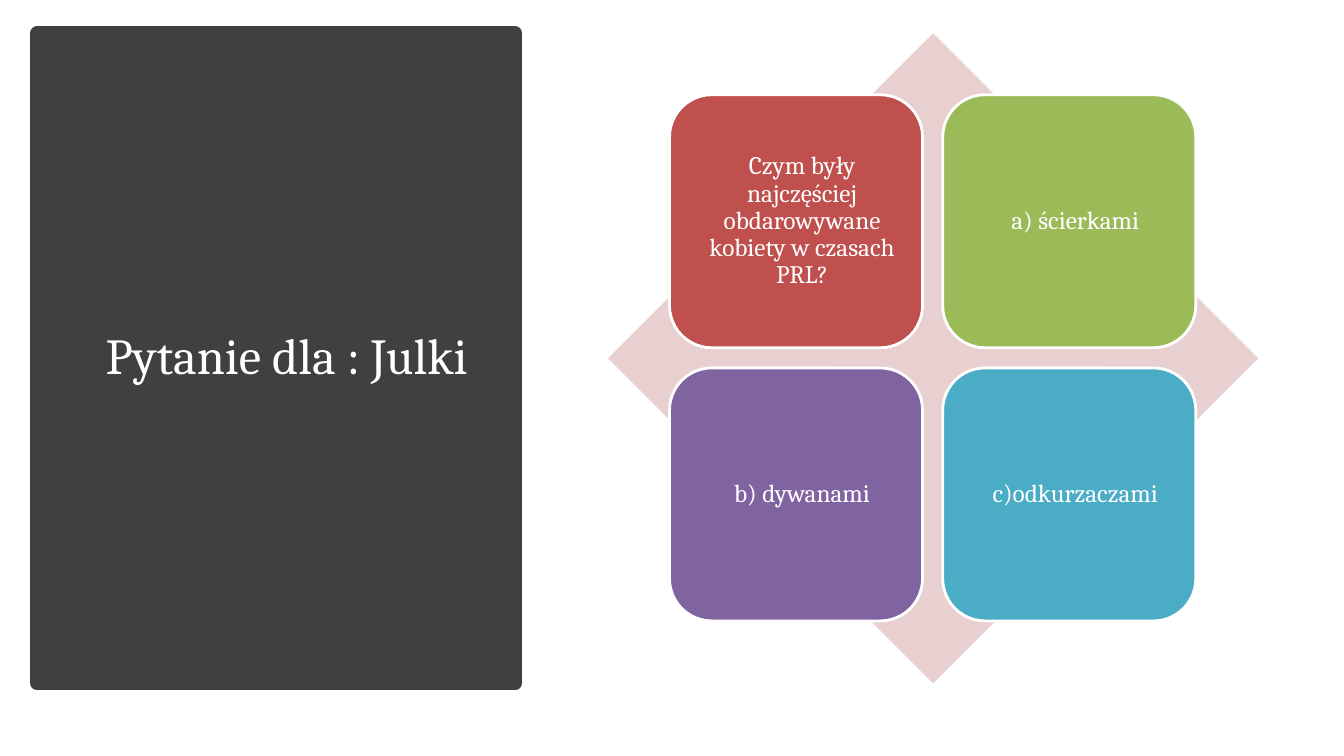
from dataclasses import dataclass

from pptx import Presentation
from pptx.dml.color import RGBColor
from pptx.enum.shapes import MSO_SHAPE as Shape
from pptx.enum.text import MSO_ANCHOR as Anchor, PP_ALIGN as Align
from pptx.slide import Slide
from pptx.util import Inches, Pt


def color(hex_code):
    return RGBColor.from_string(hex_code)


@dataclass
class QuizPage:
    page: Slide
    font: str = "Cambria"
    ink: str = "FFFFFF"

    def shape(self, kind, left, top, width, height, fill, line=None, weight=0):
        box = self.page.shapes.add_shape(
            kind, Inches(left), Inches(top), Inches(width), Inches(height))
        box.shadow.inherit = False
        box.fill.solid()
        box.fill.fore_color.rgb = color(fill)
        if line:
            box.line.color.rgb = color(line)
            box.line.width = Pt(weight)
        else:
            box.line.fill.background()
        return box

    def label(self, box, text, size, align):
        frame = box.text_frame
        frame.word_wrap = True
        frame.vertical_anchor = Anchor.MIDDLE
        frame.text = text
        para = frame.paragraphs[0]
        para.alignment = align
        para.line_spacing = 0.9
        span = para.runs[0]
        span.font.name = self.font
        span.font.size = Pt(size)
        span.font.color.rgb = color(self.ink)

    def title(self, text, left, top, width, height):
        box = self.page.shapes.add_textbox(
            Inches(left), Inches(top), Inches(width), Inches(height))
        self.label(box, text, 36, Align.LEFT)

    def tile(self, text, left, top, side, fill):
        box = self.shape(Shape.ROUNDED_RECTANGLE, left, top, side, side,
                         fill, self.ink, 2)
        box.adjustments[0] = 0.167
        frame = box.text_frame
        frame.margin_left = frame.margin_top = frame.margin_bottom = Inches(0.2)
        frame.margin_right = Inches(0.08)
        self.label(box, text, 18, Align.CENTER)
        frame.paragraphs[0].space_after = Pt(6.3)


TILES = [
    ("Czym były najczęściej obdarowywane kobiety w czasach PRL?", "C0504D"),
    ("a) ścierkami", "9BBB59"),
    ("b) dywanami", "8064A2"),
    ("c)odkurzaczami", "4BACC6"),
]
TILE_LEFT, TILE_TOP = 6.64, 0.94
TILE_SIDE, TILE_STEP = 2.51, 2.71


def main():
    deck = Presentation()
    deck.slide_width = Inches(13.33)
    deck.slide_height = Inches(7.5)
    quiz = QuizPage(deck.slides.add_slide(deck.slide_layouts[6]))

    quiz.shape(Shape.RECTANGLE, 0.37, 0.33, 4.74, 6.45, "404040", "404040", 10)
    quiz.title("Pytanie dla : Julki", 0.95, 0.68, 4.16, 5.75)
    quiz.shape(Shape.DIAMOND, 6.03, 0.33, 6.45, 6.45, "E8D0D0")
    for index, (text, fill) in enumerate(TILES):
        row, column = divmod(index, 2)
        quiz.tile(text, TILE_LEFT + column * TILE_STEP,
                  TILE_TOP + row * TILE_STEP, TILE_SIDE, fill)

    deck.save("out.pptx")


if __name__ == "__main__":
    main()
